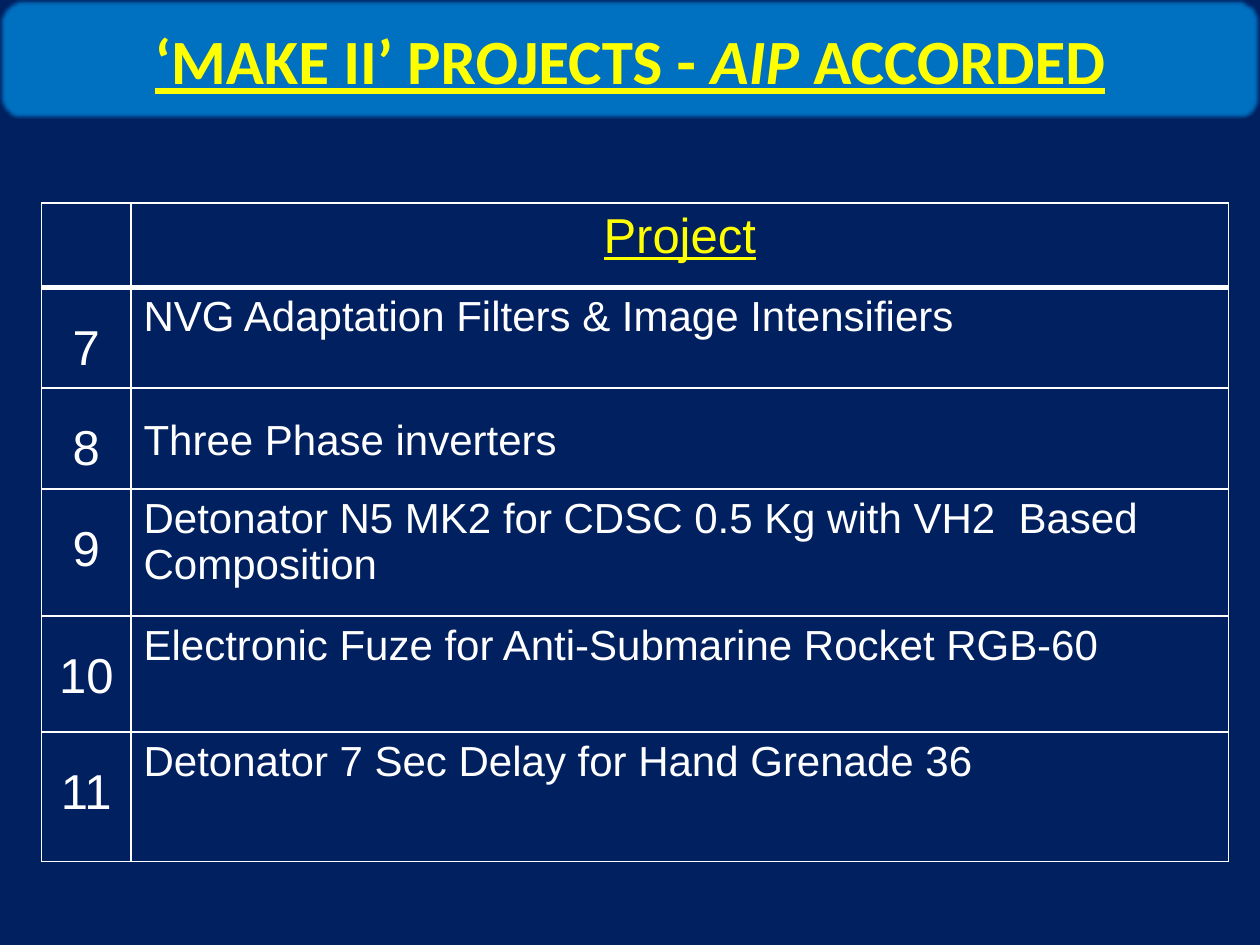
from lxml.etree import SubElement
from pptx import Presentation
from pptx.dml.color import RGBColor
from pptx.enum.shapes import MSO_SHAPE
from pptx.enum.text import MSO_ANCHOR, PP_ALIGN
from pptx.oxml.ns import qn
from pptx.util import Inches, Pt

COLORS = {name: RGBColor.from_string(value) for name, value in {
    "navy": "002060", "blue": "0070C0", "yellow": "FFFF00", "white": "FFFFFF"}.items()}

PROJECTS = [
    ("7", "NVG Adaptation Filters & Image Intensifiers"),
    ("8", "Three Phase inverters"),
    ("9", "Detonator N5 MK2 for CDSC 0.5 Kg with VH2  Based Composition"),
    ("10", "Electronic Fuze for Anti-Submarine Rocket RGB-60"),
    ("11", "Detonator 7 Sec Delay for Hand Grenade 36"),
]
COLUMN_WIDTHS = [0.71, 8.71]
ROW_HEIGHTS = [0.67, 0.8, 0.8, 1.01, 0.92, 1.03]


def style_text(paragraph, font_name, size, color, align):
    paragraph.alignment = align
    paragraph.font.name = font_name
    paragraph.font.size = Pt(size)
    paragraph.font.color.rgb = COLORS[color]


def set_border(cell, side, width):
    line = SubElement(cell._tc.get_or_add_tcPr(), qn(f"a:{side}"), w=str(Pt(width)))
    fill = SubElement(line, qn("a:solidFill"))
    SubElement(fill, qn("a:srgbClr"), val=str(COLORS["white"]))


prs = Presentation()
prs.slide_width, prs.slide_height = Inches(10), Inches(7.5)
slide = prs.slides.add_slide(prs.slide_layouts[6])
slide.background.fill.solid()
slide.background.fill.fore_color.rgb = COLORS["navy"]

projects = slide.shapes.add_table(
    len(ROW_HEIGHTS), len(COLUMN_WIDTHS), Inches(0.33), Inches(1.61),
    Inches(sum(COLUMN_WIDTHS)), Inches(sum(ROW_HEIGHTS))).table
projects.first_row = projects.horz_banding = False
for column, width in zip(projects.columns, COLUMN_WIDTHS):
    column.width = Inches(width)
for row, height in zip(projects.rows, ROW_HEIGHTS):
    row.height = Inches(height)

for r, row in enumerate(projects.rows):
    for cell in row.cells:
        for side in ("lnL", "lnR", "lnT", "lnB"):
            heavy = (r, side) in [(0, "lnB"), (1, "lnT")]
            set_border(cell, side, 3 if heavy else 1)
        cell.fill.background()

heading = projects.cell(0, 1).text_frame.paragraphs[0]
heading.text = "Project"
style_text(heading, "Arial", 28, "yellow", PP_ALIGN.CENTER)
heading.font.underline = True

for r, (number, project) in enumerate(PROJECTS, start=1):
    number_line = projects.cell(r, 0).text_frame.paragraphs[0]
    number_line.text = number
    style_text(number_line, "Arial", 28, "white", PP_ALIGN.CENTER)
    number_line.line_spacing = 1.5
    project_line = projects.cell(r, 1).text_frame.paragraphs[0]
    project_line.text = project
    style_text(project_line, "Arial", 24, "white", PP_ALIGN.JUSTIFY if number == "7" else PP_ALIGN.LEFT)
    if number == "8":
        project_line.line_spacing = 1.5

banner = slide.shapes.add_shape(
    MSO_SHAPE.ROUNDED_RECTANGLE, 0, 0, prs.slide_width, Inches(0.94))
banner.fill.solid()
banner.fill.fore_color.rgb = COLORS["blue"]
banner.line.fill.background()
banner.shadow.inherit = False
effects = banner._element.spPr.find(qn("a:effectLst"))
SubElement(effects, qn("a:softEdge"), rad=str(Pt(2.5)))

banner.text_frame.word_wrap = True
banner.text_frame.vertical_anchor = MSO_ANCHOR.MIDDLE
title = banner.text_frame.paragraphs[0]
style_text(title, "Calibri", 36, "yellow", PP_ALIGN.CENTER)
title.font.bold = title.font.underline = True
for words, italic in [("‘MAKE II’ PROJECTS - ", False), ("AIP", True), (" ACCORDED", False)]:
    run = title.add_run()
    run.text = words
    run.font.italic = italic

prs.save("out.pptx")
